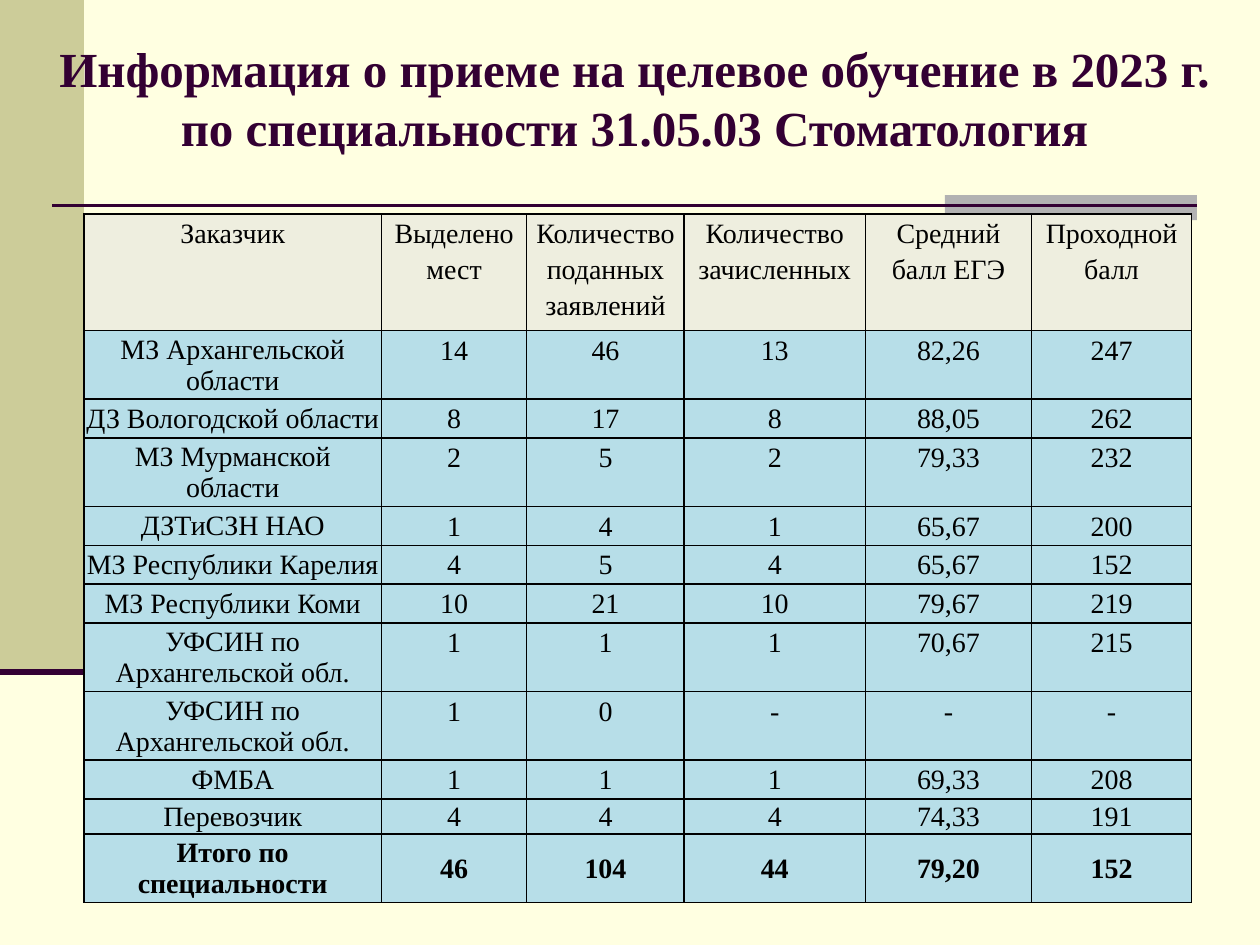
"""Build a slide with a table of targeted admission results for dentistry."""
from lxml import etree
from pptx import Presentation
from pptx.dml.color import RGBColor
from pptx.enum.shapes import MSO_CONNECTOR, MSO_SHAPE
from pptx.enum.text import MSO_ANCHOR, PP_ALIGN
from pptx.oxml.ns import qn
from pptx.util import Pt

RECT = MSO_SHAPE.RECTANGLE
STRAIGHT = MSO_CONNECTOR.STRAIGHT
TOP, MIDDLE = MSO_ANCHOR.TOP, MSO_ANCHOR.MIDDLE
CENTER = PP_ALIGN.CENTER
FONT = "Times New Roman"
COLORS = {
    "background": "FFFFE1",
    "sidebar": "CCCC99",
    "accent": "B2B2B2",
    "title": "330033",
    "header": "EEEEDF",
    "body": "B7DEE8",
    "text": "000000",
}
TITLE = ("Информация о приеме на целевое обучение в 2023 г. "
         "по специальности 31.05.03 Стоматология")
COLUMN_WIDTHS = [170, 83, 90, 103.5, 95, 91.5]
ONE_LINE, TWO_LINES = 22.2, 39.2
ROWS = [
    (66.5, ["Заказчик", "Выделено мест", "Количество поданных заявлений",
            "Количество зачисленных", "Средний балл ЕГЭ", "Проходной балл"]),
    (TWO_LINES, ["МЗ Архангельской области", "14", "46", "13", "82,26", "247"]),
    (ONE_LINE, ["ДЗ Вологодской области", "8", "17", "8", "88,05", "262"]),
    (TWO_LINES, ["МЗ Мурманской области", "2", "5", "2", "79,33", "232"]),
    (ONE_LINE, ["ДЗТиСЗН НАО", "1", "4", "1", "65,67", "200"]),
    (ONE_LINE, ["МЗ Республики Карелия", "4", "5", "4", "65,67", "152"]),
    (ONE_LINE, ["МЗ Республики Коми", "10", "21", "10", "79,67", "219"]),
    (TWO_LINES, ["УФСИН по Архангельской обл.", "1", "1", "1", "70,67", "215"]),
    (TWO_LINES, ["УФСИН по Архангельской обл.", "1", "0", "-", "-", "-"]),
    (ONE_LINE, ["ФМБА", "1", "1", "1", "69,33", "208"]),
    (20, ["Перевозчик", "4", "4", "4", "74,33", "191"]),
    (TWO_LINES, ["Итого по специальности", "46", "104", "44", "79,20", "152"]),
]


def rgb(name):
    return RGBColor.from_string(COLORS[name])


def add_block(s, x, y, w, h, color):
    sp = s.shapes.add_shape(RECT, Pt(x), Pt(y), Pt(w), Pt(h))
    sp.shadow.inherit = False
    sp.fill.solid()
    sp.fill.fore_color.rgb = rgb(color)
    sp.line.fill.background()


def add_rule(s, x1, x2, y, width):
    line = s.shapes.add_connector(STRAIGHT, Pt(x1), Pt(y), Pt(x2), Pt(y))
    line.line.color.rgb = rgb("title")
    line.line.width = Pt(width)
    etree.SubElement(line._element.spPr, qn("a:effectLst"))


def format_paragraph(p, size, color, bold):
    p.alignment = CENTER
    for r in p.runs:
        r.font.name = FONT
        r.font.size = Pt(size)
        r.font.bold = bold
        r.font.color.rgb = rgb(color)


def add_title(s, text):
    tf = s.shapes.add_textbox(Pt(22.5), Pt(21.6), Pt(680), Pt(68.4)).text_frame
    tf.word_wrap = True
    tf.vertical_anchor = MIDDLE
    tf.text = text
    format_paragraph(tf.paragraphs[0], 28, "title", True)


def add_borders(cell):
    tc_pr = cell._tc.get_or_add_tcPr()
    for i, side in enumerate(("lnL", "lnR", "lnT", "lnB")):
        ln = etree.Element(qn(f"a:{side}"), w=str(Pt(1)))
        fill = etree.SubElement(ln, qn("a:solidFill"))
        etree.SubElement(fill, qn("a:srgbClr"), val=COLORS["text"])
        tc_pr.insert(i, ln)


def fill_cell(cell, text, fill, compact, bold):
    cell.fill.solid()
    cell.fill.fore_color.rgb = rgb(fill)
    cell.margin_left = cell.margin_right = Pt(0.7 if compact else 3.6)
    cell.margin_top = Pt(0.7 if compact else 0)
    cell.margin_bottom = Pt(0)
    cell.vertical_anchor = MIDDLE if compact else TOP
    cell.text_frame.text = text
    p = cell.text_frame.paragraphs[0]
    p.line_spacing = 1.0 if compact else 1.15
    format_paragraph(p, 16, "text", bold)
    add_borders(cell)


def add_results_table(s, x, y):
    width, height = sum(COLUMN_WIDTHS), sum(h for h, _ in ROWS)
    table = s.shapes.add_table(len(ROWS), len(COLUMN_WIDTHS), Pt(x), Pt(y),
                               Pt(width), Pt(height)).table
    table.first_row = table.horz_banding = False
    for column, w in zip(table.columns, COLUMN_WIDTHS):
        column.width = Pt(w)
    last = len(ROWS) - 1
    for i, (h, values) in enumerate(ROWS):
        table.rows[i].height = Pt(h)
        for j, text in enumerate(values):
            compact = i >= last - 1 or (i > 0 and j == 0)
            fill_cell(table.cell(i, j), text, "body" if i else "header",
                      compact, i == last)


def main():
    prs = Presentation()
    prs.slide_width, prs.slide_height = Pt(720), Pt(540)
    s = prs.slides.add_slide(prs.slide_layouts[6])
    s.background.fill.solid()
    s.background.fill.fore_color.rgb = rgb("background")
    add_block(s, 0, 0, 48, 384, "sidebar")
    add_block(s, 540, 111.5, 144, 14.4, "accent")
    add_rule(s, 30, 684, 117.5, 1.5)
    add_rule(s, 0, 48, 384, 3.5)
    add_title(s, TITLE)
    add_results_table(s, 48, 122.4)
    prs.save("out.pptx")


if __name__ == "__main__":
    main()
